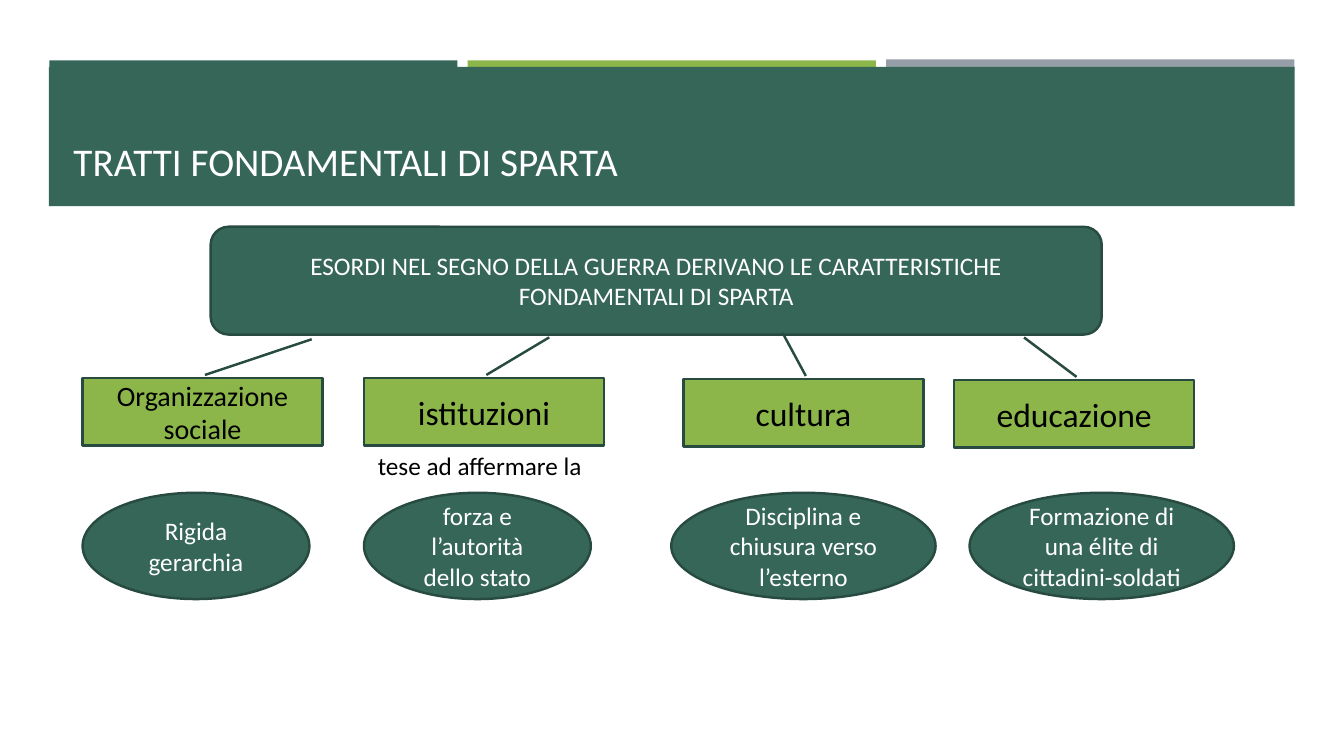
from dataclasses import dataclass

from pptx import Presentation
from pptx.dml.color import RGBColor as Rgb
from pptx.enum.shapes import MSO_SHAPE as Kind
from pptx.enum.text import MSO_ANCHOR as Anchor, MSO_AUTO_SIZE as Fit, PP_ALIGN as Align
from pptx.shapes.autoshape import Shape
from pptx.slide import Slide
from pptx.util import Pt

HUES = {
    "green": "366658",
    "lime": "8CB64A",
    "grey": "969FA7",
    "edge": "284B41",
    "white": "FFFFFF",
    "black": "000000",
}
FONT = "Calibri"


@dataclass(frozen=True)
class Area:
    left: float
    top: float
    width: float
    height: float


@dataclass(frozen=True)
class Trait:
    name: str
    size: float
    left: float
    top: float
    tip: tuple[float, float]
    detail: str
    oval: Area


def tint(hue: str) -> Rgb:
    return Rgb.from_string(HUES[hue])


def points(area: Area) -> tuple[Pt, Pt, Pt, Pt]:
    return Pt(area.left), Pt(area.top), Pt(area.width), Pt(area.height)


def write(shape: Shape, text: str, size: float, hue: str,
          align: Align, anchor: Anchor, wrap: bool = True) -> None:
    frame = shape.text_frame
    frame.text = text
    frame.word_wrap = wrap
    frame.vertical_anchor = anchor
    for para in frame.paragraphs:
        para.alignment = align
        for run in para.runs:
            run.font.name = FONT
            run.font.size = Pt(size)
            run.font.color.rgb = tint(hue)


def draw(slide: Slide, kind: Kind, area: Area, fill: str, edge: bool = True) -> Shape:
    shape = slide.shapes.add_shape(kind, *points(area))
    shape.shadow.inherit = False
    shape.fill.solid()
    shape.fill.fore_color.rgb = tint(fill)
    if edge:
        shape.line.color.rgb = tint("edge")
        shape.line.width = Pt(1.75)
    else:
        shape.line.fill.background()
    return shape


def label(slide: Slide, kind: Kind, area: Area, fill: str,
          text: str, size: float, hue: str) -> Shape:
    shape = draw(slide, kind, area, fill)
    write(shape, text, size, hue, Align.CENTER, Anchor.MIDDLE)
    return shape


def note(slide: Slide, area: Area, text: str, size: float,
         hue: str, anchor: Anchor, wrap: bool) -> Shape:
    box = slide.shapes.add_textbox(*points(area))
    write(box, text, size, hue, Align.LEFT, anchor, wrap)
    return box


def show(slide: Slide, trait: Trait) -> None:
    area = Area(trait.left, trait.top, 171.4, 48.2)
    call = label(slide, Kind.LINE_CALLOUT_1, area, "lime", trait.name, trait.size, "black")
    for spot, value in enumerate((*trait.tip, -0.045, 0.51)):
        call.adjustments[spot] = value
    label(slide, Kind.OVAL, trait.oval, "green", trait.detail, 18, "white")


BARS = (("green", 7.2), ("lime", 7.2), ("grey", 7.9))
TRAITS = (
    Trait("Organizzazione sociale", 20, 59, 270, (-0.574, 0.955),
          "Rigida gerarchia", Area(59, 352, 162, 75.9)),
    Trait("istituzioni", 24, 260, 270, (-0.602, 0.772),
          "forza e l’autorità dello stato", Area(260, 352, 162, 75.9)),
    Trait("cultura", 24, 488.2, 270.7, (-0.683, 0.413),
          "Disciplina e chiusura verso l’esterno", Area(479.5, 352, 188.8, 75.9)),
    Trait("educazione", 24, 681.6, 271.4, (-0.629, 0.291),
          "Formazione di una élite di cittadini-soldati", Area(692.6, 352, 188.8, 75.9)),
)


def main() -> None:
    deck = Presentation()
    deck.slide_width, deck.slide_height = Pt(960), Pt(540)
    slide = deck.slides.add_slide(deck.slide_layouts[6])

    for step, (hue, height) in enumerate(BARS):
        area = Area(35.2 + 298.9 * step, 43.2 - height + 7.2, 291.6, height)
        draw(slide, Kind.RECTANGLE, area, hue, edge=False)

    draw(slide, Kind.RECTANGLE, Area(34.9, 47.8, 889.9, 99.4), "green", edge=False)
    note(slide, Area(45.4, 57.6, 868.3, 77.8), "TRATTI FONDAMENTALI DI SPARTA",
         28, "white", Anchor.BOTTOM, True)

    label(slide, Kind.ROUNDED_RECTANGLE, Area(150.5, 162, 636.5, 77), "green",
          "ESORDI NEL SEGNO DELLA GUERRA DERIVANO LE CARATTERISTICHE "
          "FONDAMENTALI DI SPARTA", 18, "white")

    for trait in TRAITS:
        show(slide, trait)

    link = note(slide, Area(262.8, 318.2, 163.4, 29.1), "tese ad affermare la",
                18, "black", Anchor.TOP, False)
    link.text_frame.auto_size = Fit.SHAPE_TO_FIT_TEXT

    deck.save("out.pptx")


if __name__ == "__main__":
    main()
